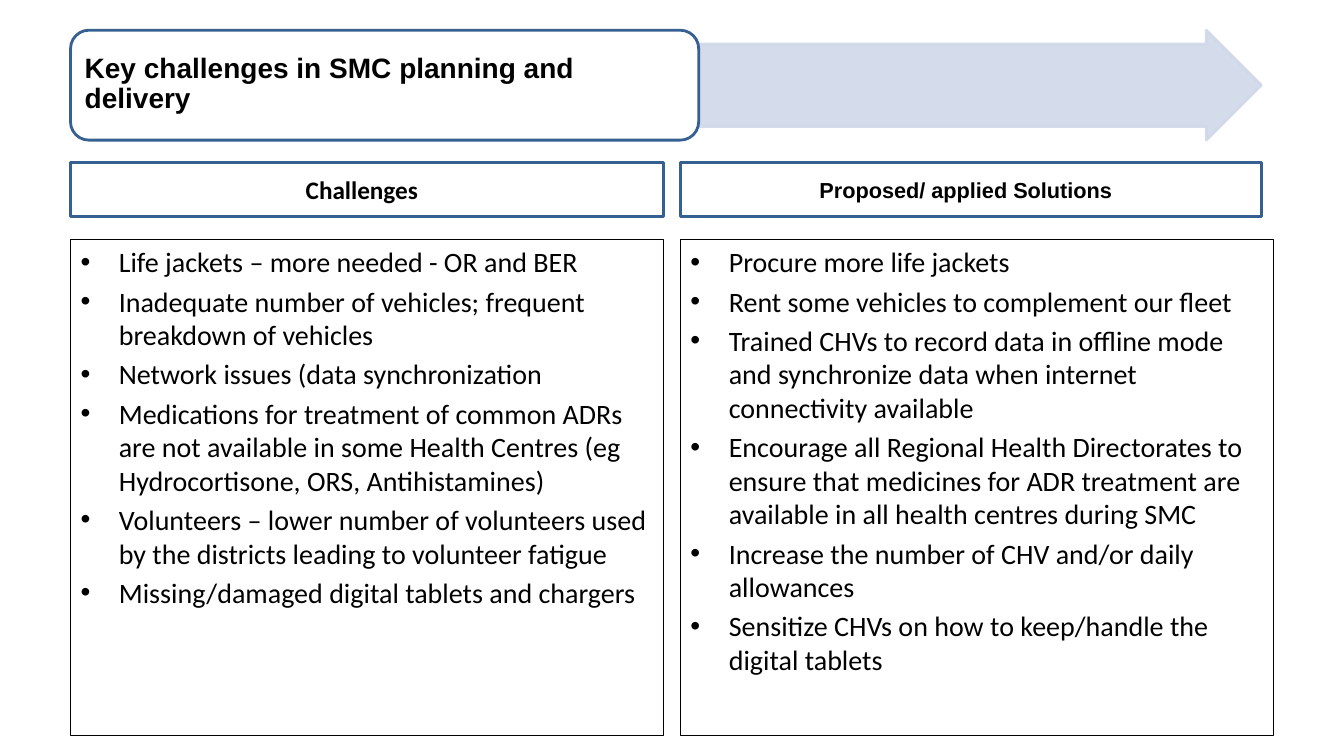
from dataclasses import dataclass

from lxml import etree
from pptx import Presentation
from pptx.dml.color import RGBColor
from pptx.enum.shapes import MSO_SHAPE
from pptx.enum.text import MSO_ANCHOR, PP_ALIGN
from pptx.oxml.ns import qn
from pptx.util import Inches, Pt

BLACK = RGBColor(0x00, 0x00, 0x00)
WHITE = RGBColor(0xFF, 0xFF, 0xFF)
BLUE = RGBColor(0x37, 0x60, 0x92)
PALE_BLUE = RGBColor(0xD0, 0xD8, 0xE8)
RECTANGLE = MSO_SHAPE.RECTANGLE
ROUNDED = MSO_SHAPE.ROUNDED_RECTANGLE
RIGHT_ARROW = MSO_SHAPE.RIGHT_ARROW
CENTER, LEFT = PP_ALIGN.CENTER, PP_ALIGN.LEFT
MIDDLE, TOP = MSO_ANCHOR.MIDDLE, MSO_ANCHOR.TOP

BANNER_TOP, BANNER_HEIGHT = 0.3, 1.09
HEADING_TOP, HEADING_HEIGHT = 1.61, 0.54
LIST_TOP, LIST_WIDTH, LIST_HEIGHT = 2.38, 5.88, 4.92
BULLET_INDENT = Inches(0.38)


@dataclass
class Column:
    left: float
    heading: str
    heading_width: float
    heading_font: str
    heading_size: float
    points: list[str]


COLUMNS = [
    Column(0.7, "Challenges", 5.88, "Calibri", 18, [
        "Life jackets – more needed - OR and BER",
        "Inadequate number of vehicles; frequent breakdown of vehicles",
        "Network issues (data synchronization",
        "Medications for treatment of common ADRs are not available in some "
        "Health Centres (eg Hydrocortisone, ORS, Antihistamines)",
        "Volunteers – lower number of volunteers used by the districts "
        "leading to volunteer fatigue",
        "Missing/damaged digital tablets and chargers",
    ]),
    Column(6.75, "Proposed/ applied Solutions", 5.76, "Arial", 15.5, [
        "Procure more life jackets",
        "Rent some vehicles to complement our fleet",
        "Trained CHVs to record data in offline mode and synchronize data "
        "when internet connectivity available",
        "Encourage all Regional Health Directorates to ensure that medicines "
        "for ADR treatment are available in all health centres during SMC",
        "Increase the number of CHV and/or daily allowances",
        "Sensitize CHVs on how to keep/handle the digital tablets",
    ]),
]


def add_box(slide, kind, left: float, top: float, width: float, height: float,
            fill: RGBColor | None, line: RGBColor, line_width: float):
    box = slide.shapes.add_shape(kind, Inches(left), Inches(top),
                                 Inches(width), Inches(height))
    box.shadow.inherit = False
    if fill is None:
        box.fill.background()
    else:
        box.fill.solid()
        box.fill.fore_color.rgb = fill
    box.line.color.rgb = line
    box.line.width = Pt(line_width)
    return box


def format_text(paragraph, font_name: str, size: float, bold: bool, align) -> None:
    paragraph.alignment = align
    for run in paragraph.runs:
        run.font.name = font_name
        run.font.size = Pt(size)
        run.font.bold = bold
        run.font.color.rgb = BLACK


def add_bullet(paragraph) -> None:
    properties = paragraph._p.get_or_add_pPr()
    properties.set("marL", str(BULLET_INDENT))
    properties.set("indent", str(-BULLET_INDENT))
    etree.SubElement(properties, qn("a:buFont")).set("typeface", "Arial")
    etree.SubElement(properties, qn("a:buChar")).set("char", "•")


def add_banner(slide) -> None:
    arrow = add_box(slide, RIGHT_ARROW, 6.94, BANNER_TOP, 5.57, BANNER_HEIGHT,
                    PALE_BLUE, PALE_BLUE, 2)
    arrow.adjustments[0] = 0.75
    arrow.adjustments[1] = 0.5
    for color in arrow._element.spPr.iter(qn("a:srgbClr")):
        etree.SubElement(color, qn("a:alpha")).set("val", "90000")
    add_box(slide, ROUNDED, 0.7, BANNER_TOP, 6.23, BANNER_HEIGHT, WHITE, BLUE, 2)

    # Title placeholder, brought in front of the banner
    title = slide.shapes.title
    title.left, title.top = Inches(0.76), Inches(0.35)
    title.width, title.height = Inches(6.13), Inches(0.98)
    frame = title.text_frame
    frame.text = "Key challenges in SMC planning and delivery"
    frame.word_wrap = True
    frame.vertical_anchor = MIDDLE
    frame.margin_left = frame.margin_right = Inches(0.08)
    frame.margin_top = frame.margin_bottom = Inches(0.04)
    frame.paragraphs[0].line_spacing = 0.9
    format_text(frame.paragraphs[0], "Arial", 20, True, LEFT)
    slide.shapes.element.append(title.element)


def add_column(slide, column: Column) -> None:
    # Heading
    heading = add_box(slide, RECTANGLE, column.left, HEADING_TOP,
                      column.heading_width, HEADING_HEIGHT, WHITE, BLUE, 2)
    frame = heading.text_frame
    frame.text = column.heading
    frame.vertical_anchor = MIDDLE
    frame.margin_right = Inches(0.2)
    format_text(frame.paragraphs[0], column.heading_font, column.heading_size,
                True, CENTER)

    # Bulleted list
    listing = add_box(slide, RECTANGLE, column.left, LIST_TOP, LIST_WIDTH,
                      LIST_HEIGHT, None, BLACK, 0.75)
    frame = listing.text_frame
    frame.text = "\n".join(column.points)
    frame.word_wrap = True
    frame.vertical_anchor = TOP
    for paragraph in frame.paragraphs:
        paragraph.space_before = Pt(4)
        format_text(paragraph, "Calibri", 20, False, LEFT)
        add_bullet(paragraph)


def main() -> None:
    presentation = Presentation()
    presentation.slide_width = Inches(13.33)
    presentation.slide_height = Inches(7.5)
    slide = presentation.slides.add_slide(presentation.slide_layouts[5])
    add_banner(slide)
    for column in COLUMNS:
        add_column(slide, column)
    presentation.save("out.pptx")


if __name__ == "__main__":
    main()
